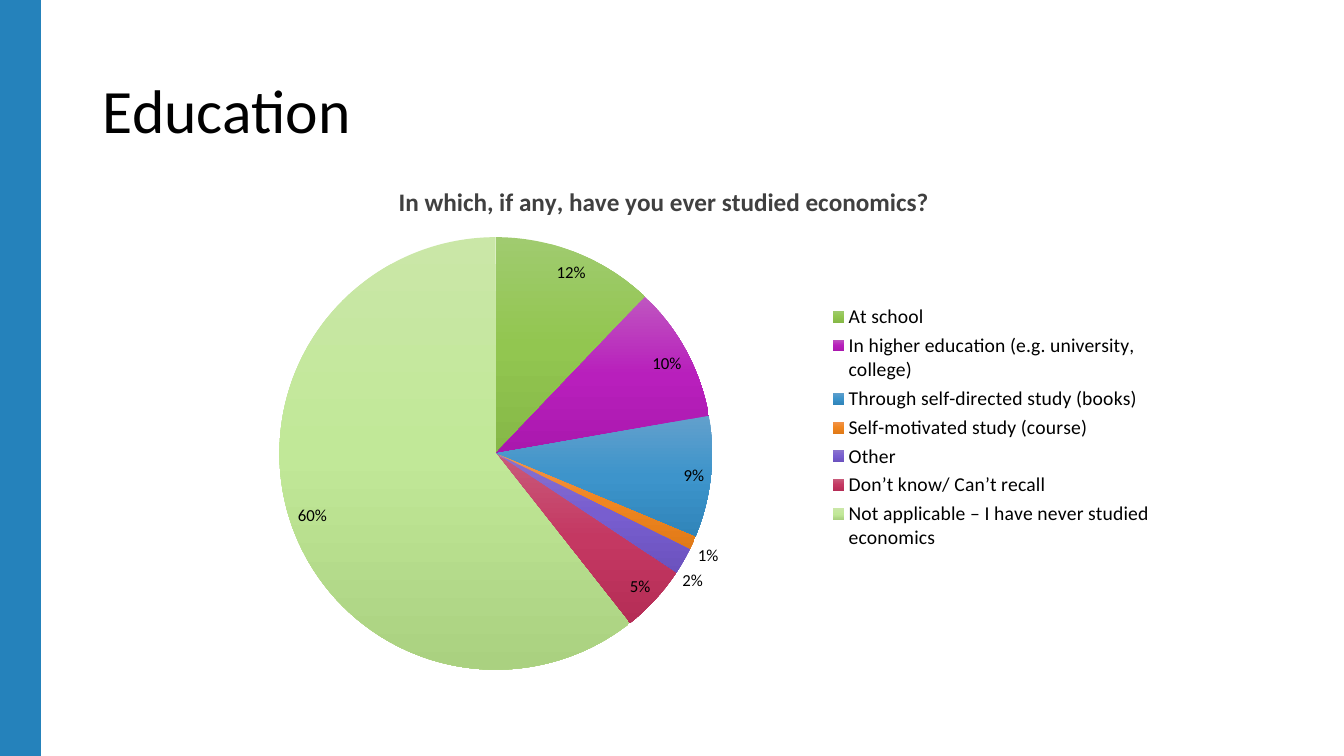
from copy import deepcopy
from pptx import Presentation
from pptx.chart.data import CategoryChartData
from pptx.dml.color import RGBColor
from pptx.enum.chart import XL_CHART_TYPE, XL_LABEL_POSITION, XL_LEGEND_POSITION
from pptx.enum.shapes import MSO_SHAPE
from pptx.enum.text import MSO_ANCHOR, MSO_AUTO_SIZE, PP_ALIGN
from pptx.oxml import parse_xml
from pptx.oxml.ns import nsdecls
from pptx.util import Inches, Pt

SLICES = [
    ("At school", 12, ("A0CB6F", "92C650", "86B847")),
    ("In higher education (e.g. university, college)", 10, ("BF55C0", "B81FBC", "AA18AE")),
    ("Through self-directed study (books)", 9, ("62A0CC", "3D94CB", "3085BA")),
    ("Self-motivated study (course)", 1, ("F29550", "F08620", "E07A18")),
    ("Other", 2, ("8A73CE", "785ECF", "6B52BE")),
    ("Don’t know/ Can’t recall", 5, ("C95A7A", "C43862", "B52D56")),
    ("Not applicable – I have never studied economics", 60, ("CAE7A7", "C1E898", "AAD180")),
]


def tint(code):
    return RGBColor.from_string(code)


class Page:
    face = "Calibri"
    ink = "000000"

    def __init__(self, deck):
        self.slide = deck.slides.add_slide(deck.slide_layouts[5])

    def style(self, font, size, color=ink, bold=False):
        font.name = self.face
        font.size = Pt(size)
        font.bold = bold
        font.color.rgb = tint(color)

    def text(self, para, words, size, color=ink, bold=False):
        run = para.add_run()
        run.text = words
        self.style(run.font, size, color, bold)

    def band(self, x, y, w, h, color):
        bar = self.slide.shapes.add_shape(
            MSO_SHAPE.RECTANGLE, Inches(x), Inches(y), Inches(w), Inches(h))
        bar.shadow.inherit = False
        bar.fill.solid()
        bar.fill.fore_color.rgb = tint(color)
        bar.line.color.rgb = tint(color)
        bar.line.width = Pt(1)

    def title(self, words, x, y, w, h):
        box = self.slide.shapes.title
        box.left, box.top, box.width, box.height = map(Inches, (x, y, w, h))
        frame = box.text_frame
        frame.auto_size = MSO_AUTO_SIZE.NONE
        frame.word_wrap = True
        frame.vertical_anchor = MSO_ANCHOR.MIDDLE
        para = frame.paragraphs[0]
        para.alignment = PP_ALIGN.LEFT
        para.line_spacing = 0.9
        self.text(para, words, 44)

    def place(self, part, x, y, w, h, inner=False):
        target = '<c:layoutTarget val="inner"/>' if inner else ""
        modes = "".join(f'<c:{side}Mode val="edge"/>' for side in "xy")
        sizes = "".join(f'<c:{key} val="{val}"/>' for key, val in zip("xywh", (x, y, w, h)))
        for old in part.xpath("c:layout"):
            part.remove(old)
        layout = parse_xml(
            f'<c:layout {nsdecls("c")}><c:manualLayout>{target}{modes}{sizes}'
            "</c:manualLayout></c:layout>")
        if inner:
            part.insert(0, layout)
        else:
            part.xpath("c:legendPos")[0].addnext(layout)

    def shade(self, chart, point, colors):
        fill = point.format.fill
        fill.gradient()
        fill.gradient_angle = 270
        stops = chart.element.xpath(".//c:dPt//a:gsLst")[-1]
        stops.insert(1, deepcopy(stops[0]))
        for step, (stop, color) in enumerate(zip(fill.gradient_stops, colors)):
            stop.position = step / 2
            stop.color.rgb = tint(color)
        point.format.line.fill.background()

    def pie(self, head, slices, x, y, w, h):
        data = CategoryChartData()
        data.categories = [name for name, _, _ in slices]
        data.add_series("Series 1", [share for _, share, _ in slices])
        chart = self.slide.shapes.add_chart(
            XL_CHART_TYPE.PIE, Inches(x), Inches(y), Inches(w), Inches(h), data).chart
        self.style(chart.font, 10)
        chart.has_title = True
        self.text(chart.chart_title.text_frame.paragraphs[0], head, 18, "404040", True)
        chart.has_legend = True
        key = chart.legend
        key.position = XL_LEGEND_POSITION.RIGHT
        key.include_in_layout = False
        self.style(key.font, 14)
        plot = chart.plots[0]
        plot.vary_by_categories = True
        plot.has_data_labels = True
        tags = plot.data_labels
        tags.show_value = True
        tags.show_percentage = False
        tags.number_format = '0"%"'
        tags.number_format_is_linked = False
        tags.position = XL_LABEL_POSITION.BEST_FIT
        self.style(tags.font, 12)
        for spot, (_, _, colors) in enumerate(slices):
            self.shade(chart, plot.series[0].points[spot], colors)
        self.place(chart.element.xpath(".//c:plotArea")[0], 0.11, 0.14, 0.44, 0.83, True)
        self.place(chart.element.xpath(".//c:legend")[0], 0.67, 0.26, 0.33, 0.49)


def main():
    deck = Presentation()
    deck.slide_width = Inches(13.33)
    deck.slide_height = Inches(7.5)
    page = Page(deck)
    page.band(0, 0, 0.4, 7.5, "2582BB")
    page.pie("In which, if any, have you ever studied economics?", SLICES, 1.68, 1.63, 9.81, 5.17)
    page.title("Education", 0.92, 0.4, 11.5, 1.45)
    deck.save("out.pptx")


if __name__ == "__main__":
    main()
